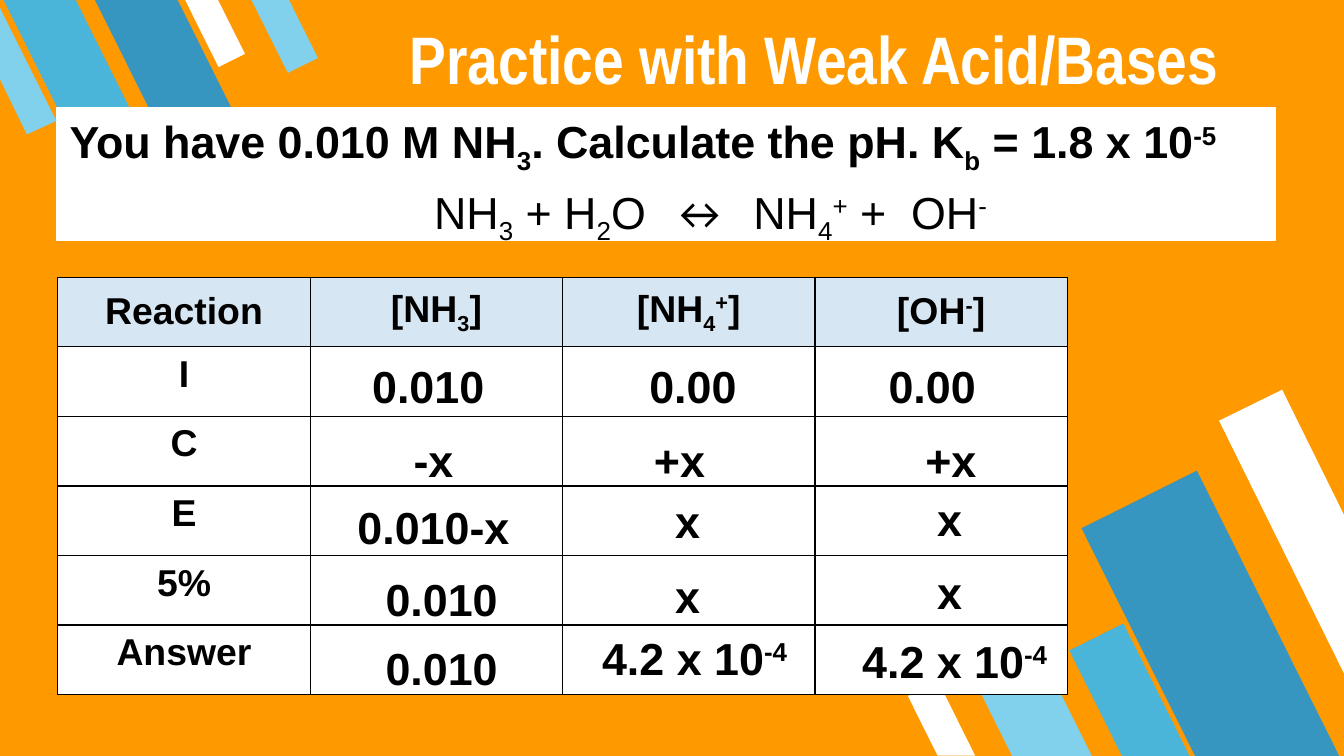
from lxml.etree import SubElement
from pptx import Presentation
from pptx.dml.color import RGBColor
from pptx.enum.shapes import MSO_SHAPE
from pptx.enum.text import MSO_ANCHOR, PP_ALIGN
from pptx.oxml.ns import qn
from pptx.util import Pt

ORANGE = RGBColor(0xFF, 0x99, 0x00)
WHITE = RGBColor(0xFF, 0xFF, 0xFF)
BLACK = RGBColor(0x00, 0x00, 0x00)
LIGHT_BLUE = RGBColor(0x81, 0xD1, 0xEC)
MID_BLUE = RGBColor(0x4B, 0xB5, 0xD9)
DARK_BLUE = RGBColor(0x37, 0x96, 0xBF)
HEADER_BLUE = RGBColor(0xD6, 0xE6, 0xF2)

SUB, SUP = -25000, 30000  # baseline shifts in thousandths of a percent

# Stripes: left, top, width, height, colour; relative to the corner box
TOP_STRIPES = [
    (107.3, -5.8, 15.8, 40.3, WHITE),
    (18.7, -13, 34.6, 85, MID_BLUE),
    (70.6, -14.4, 39.6, 98.6, DARK_BLUE),
    (143.3, -7.2, 18, 44.6, LIGHT_BLUE),
]
TOP_EDGE = [(14.4, 72), (30.2, 64.8), (0, 4.3), (0, 42.5)]
BOTTOM_STRIPES = [
    (32.4, 115.2, 38.2, 95, LIGHT_BLUE),
    (118.8, 49.7, 69.1, 172.1, DARK_BLUE),
    (93.6, 128.2, 32.4, 79.9, MID_BLUE),
    (0, 157.7, 18, 44.6, WHITE),
]
BOTTOM_EDGE = [(191.5, 0), (157.7, 16.6), (224.6, 151.9), (224.6, 67)]

QUESTION = [("You have 0.010 M NH",), ("3", SUB), (". Calculate the pH. K",),
            ("b", SUB), (" = 1.8 x 10",), ("-5", SUP)]
EQUATION = [("NH",), ("3", SUB), (" + H",), ("2", SUB), ("O  ",),
            ("↔", 0, "Calibri"), ("  NH",), ("4", SUB), ("+", SUP),
            (" +  OH",), ("-", SUP)]

HEADERS = [
    [("Reaction",)],
    [("[NH",), ("3", SUB), ("]",)],
    [("[NH",), ("4", SUB), ("+", SUP), ("]",)],
    [("[OH",), ("-", SUP), ("]",)],
]
ROW_LABELS = ["I", "C", "E", "5%", "Answer"]
PRODUCT = [("4.2 x 10",), ("-4 ", SUP)]

# Answers: left, top, width, runs; relative to the table box
ANSWERS = [
    (142.6, 40.3, 111.6, [("0.010",)]),
    (284.4, 40.3, 111.6, [("0.00",)]),
    (412.6, 40.3, 111.6, [("0.00",)]),
    (145.4, 79.9, 111.6, [("-x",)]),
    (277.2, 79.9, 111.6, [("+x",)]),
    (422.6, 79.9, 111.6, [("+x",)]),
    (145.4, 115.9, 111.6, [("0.010-x",)]),
    (281.5, 112.3, 111.6, [("x",)]),
    (421.9, 111.6, 111.6, [("x",)]),
    (149.8, 154.1, 111.6, [("0.010",)]),
    (281.5, 152.6, 111.6, [("x",)]),
    (421.9, 150.5, 111.6, [("x",)]),
    (149.8, 191.5, 111.6, [("0.010",)]),
    (281.5, 185.8, 123.1, PRODUCT),
    (421.9, 187.2, 121, PRODUCT),
]


def add_runs(paragraph, runs, size, bold=True, color=BLACK, default_font="Arial"):
    for text, baseline, name in ((*run, 0, default_font)[:2] + (run[2:] or (default_font,))
                                 for run in runs):
        run = paragraph.add_run()
        run.text = text
        run.font.size = Pt(size)
        run.font.bold = bold
        run.font.name = name
        run.font.color.rgb = color
        if baseline:
            run.font._element.set("baseline", str(baseline))


def paint(shape, color):
    shape.shadow.inherit = False
    shape.fill.solid()
    shape.fill.fore_color.rgb = color
    shape.line.fill.background()


def add_stripes(slide, box, stripes, rotation, edge_points, edge_color):
    left, top = box[:2]
    for x, y, width, height, color in stripes:
        stripe = slide.shapes.add_shape(MSO_SHAPE.FLOWCHART_MANUAL_INPUT, Pt(left + x),
                                        Pt(top + y), Pt(width), Pt(height))
        stripe.rotation = rotation
        stripe._element.spPr.xfrm.set("flipH", "1")
        paint(stripe, color)
    # Stripe cut off by the slide edge
    points = [(Pt(left + x), Pt(top + y)) for x, y in edge_points]
    builder = slide.shapes.build_freeform(*points[0])
    builder.add_line_segments(points[1:], close=True)
    paint(builder.convert_to_shape(), edge_color)


def place_title(slide, box):
    title = slide.shapes.title
    title.left, title.top, title.width, title.height = map(Pt, box)
    frame = title.text_frame
    frame.margin_left = frame.margin_right = Pt(7.2)
    frame.margin_top = frame.margin_bottom = Pt(7.2)
    frame.vertical_anchor = MSO_ANCHOR.MIDDLE
    paragraph = frame.paragraphs[0]
    paragraph.alignment = PP_ALIGN.LEFT
    add_runs(paragraph, [("Practice with Weak Acid/Bases",)], 36,
             color=WHITE, default_font="Arial Narrow")


def add_problem(slide, box):
    panel = slide.shapes.add_shape(MSO_SHAPE.RECTANGLE, *map(Pt, box))
    paint(panel, WHITE)
    panel.line.color.rgb = WHITE
    panel.line.width = Pt(0.75)
    frame = panel.text_frame
    frame.word_wrap = True
    frame.vertical_anchor = MSO_ANCHOR.TOP
    question = frame.paragraphs[0]
    question.alignment = PP_ALIGN.LEFT
    add_runs(question, QUESTION, 24)
    equation = frame.add_paragraph()
    equation.alignment = PP_ALIGN.CENTER
    equation.space_before = Pt(4.8)
    equation._p.get_or_add_pPr().set("marL", str(Pt(48)))
    add_runs(equation, EQUATION, 24, bold=False)


def add_borders(cell):
    properties = cell._tc.get_or_add_tcPr()
    for index, side in enumerate(("a:lnL", "a:lnR", "a:lnT", "a:lnB")):
        line = SubElement(properties, qn(side), w=str(Pt(0.75)))
        fill = SubElement(line, qn("a:solidFill"))
        SubElement(fill, qn("a:srgbClr"), val=str(BLACK))
        properties.insert(index, line)


def add_ice_table(slide, box):
    rows = [HEADERS] + [[[(label,)], [], [], []] for label in ROW_LABELS]
    table = slide.shapes.add_table(len(rows), len(HEADERS), *map(Pt, box)).table
    for column in table.columns:
        column.width = Pt(box[2] / len(HEADERS))
    for row_index, row in enumerate(rows):
        table.rows[row_index].height = Pt(box[3] / len(rows))
        for column_index, runs in enumerate(row):
            cell = table.cell(row_index, column_index)
            cell.fill.solid()
            cell.fill.fore_color.rgb = WHITE if row_index else HEADER_BLUE
            cell.vertical_anchor = MSO_ANCHOR.TOP if row_index else MSO_ANCHOR.MIDDLE
            add_borders(cell)
            paragraph = cell.text_frame.paragraphs[0]
            paragraph.alignment = PP_ALIGN.CENTER
            add_runs(paragraph, runs, 20)


def add_answers(slide, box):
    for x, y, width, runs in ANSWERS:
        answer = slide.shapes.add_textbox(Pt(box[0] + x), Pt(box[1] + y), Pt(width), Pt(36))
        answer.text_frame.word_wrap = True
        paragraph = answer.text_frame.paragraphs[0]
        paragraph.alignment = PP_ALIGN.CENTER
        add_runs(paragraph, runs, 24)


def main():
    presentation = Presentation()
    presentation.slide_width, presentation.slide_height = Pt(720), Pt(405)
    slide = presentation.slides.add_slide(presentation.slide_layouts[5])
    slide.background.fill.solid()
    slide.background.fill.fore_color.rgb = ORANGE

    # Corner decoration
    add_stripes(slide, (495.4, 208.8, 224.6, 196.2), BOTTOM_STRIPES, 153.5, BOTTOM_EDGE, WHITE)
    add_stripes(slide, (0, 0, 171, 72), TOP_STRIPES, 333.5, TOP_EDGE, LIGHT_BLUE)

    # Title and problem statement
    place_title(slide, (212.4, 4.3, 507.6, 53.3))
    add_problem(slide, (30.2, 57.6, 653, 71.3))

    # Table with the answers laid over it
    table_box = (31, 148.5, 540.8, 223.8)
    add_ice_table(slide, table_box)
    add_answers(slide, table_box)
    presentation.save("out.pptx")


if __name__ == "__main__":
    main()
